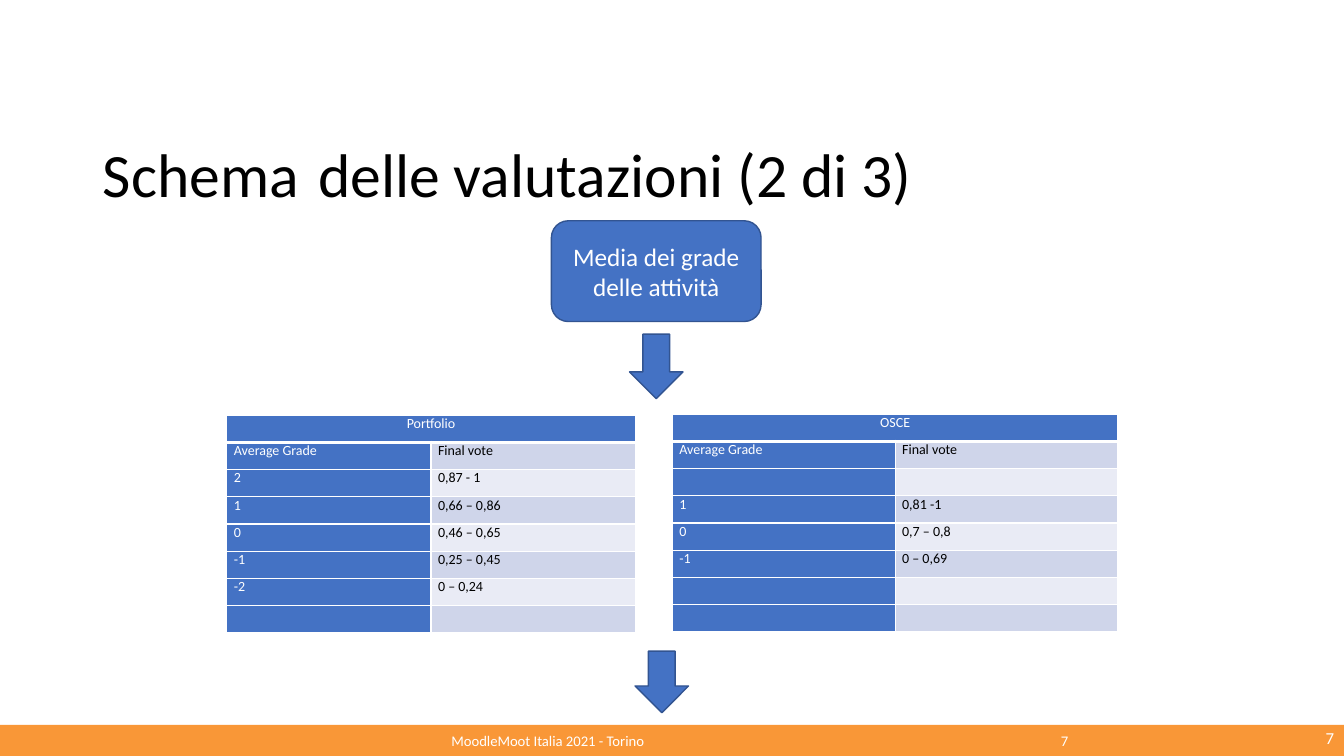
from dataclasses import dataclass
from typing import Optional

from lxml.etree import SubElement
from pptx import Presentation
from pptx.dml.color import RGBColor
from pptx.enum.shapes import MSO_SHAPE as Preset
from pptx.enum.text import MSO_ANCHOR as Anchor, MSO_AUTO_SIZE as AutoSize, PP_ALIGN as Align
from pptx.oxml.ns import qn
from pptx.util import Inches, Pt


@dataclass(frozen=True)
class Theme:
    font: str = "Calibri"
    white: str = "FFFFFF"
    black: str = "000000"
    blue: str = "4472C4"
    outline: str = "325491"
    orange: str = "F99737"
    bands: tuple[str, str] = ("CFD5EA", "E9EBF5")
    title_size: float = 44
    title_gap_size: float = 60
    box_size: float = 18
    page_size: float = 12
    footer_size: float = 10.5
    table_size: float = 10


@dataclass(frozen=True)
class Area:
    """Left, top, width and height as percentages of the slide."""
    left: float
    top: float
    width: float
    height: float

    def emu(self) -> tuple[int, int, int, int]:
        return (round(WIDTH * self.left / 100), round(HEIGHT * self.top / 100),
                round(WIDTH * self.width / 100), round(HEIGHT * self.height / 100))


@dataclass(frozen=True)
class Block:
    """A filled preset shape."""
    preset: Preset
    area: Area
    fill: str
    line: Optional[str] = None
    rotation: float = 0


@dataclass(frozen=True)
class GradeTable:
    name: str
    area: Area
    grades: tuple[tuple[str, str], ...]


THEME = Theme()
WIDTH, HEIGHT = Inches(13.33), Inches(7.5)
EMPTY = ("", "")

TITLE_AREA = Area(6.9, 9.87, 86.25, 19.33)
PAGE_AREA = Area(83.12, 94.93, 16.88, 5.33)
FOOTER = Block(Preset.RECTANGLE, Area(0, 95.87, 100, 4.13), THEME.orange)
FOOTER_TABS = (32.85, 78.2)  # percentages of the slide width
AVERAGE = Block(Preset.ROUNDED_RECTANGLE, Area(41.03, 29.2, 15.6, 13.33),
                THEME.blue, THEME.outline)
ARROWS = [
    Block(Preset.RIGHT_ARROW, area, THEME.blue, THEME.outline, 90)
    for area in (Area(46.43, 44.93, 4.8, 7.07), Area(46.95, 86.67, 4.58, 7.07))
]
TABLES = [
    GradeTable("Portfolio", Area(16.88, 54.93, 30.38, 28.8), (
        ("2", "0,87 - 1"), ("1", "0,66 – 0,86"), ("0", "0,46 – 0,65"),
        ("-1", "0,25 – 0,45"), ("-2", "0 – 0,24"), EMPTY)),
    GradeTable("OSCE", Area(50.03, 54.8, 33.15, 28.8), (
        EMPTY, ("1", "0,81 -1"), ("0", "0,7 – 0,8"),
        ("-1", "0 – 0,69"), EMPTY, EMPTY)),
]


def rgb(value: str) -> RGBColor:
    return RGBColor.from_string(value)


def add_span(para, text: str, size: float, color: str) -> None:
    span = para.add_run()
    span.text = text
    span.font.name = THEME.font
    span.font.size = Pt(size)
    span.font.color.rgb = rgb(color)


def add_block(page, block: Block):
    shape = page.shapes.add_shape(block.preset, *block.area.emu())
    shape.shadow.inherit = False
    shape.rotation = block.rotation
    shape.fill.solid()
    shape.fill.fore_color.rgb = rgb(block.fill)
    if block.line:
        shape.line.color.rgb = rgb(block.line)
        shape.line.width = Pt(1)
    else:
        shape.line.fill.background()
    return shape


def write(shape, text: str, size: float, align: Align):
    frame = shape.text_frame
    frame.word_wrap = True
    frame.vertical_anchor = Anchor.MIDDLE
    para = frame.paragraphs[0]
    para.alignment = align
    add_span(para, text, size, THEME.white)
    return para


def add_title(page) -> None:
    title = page.shapes.title
    title.left, title.top, title.width, title.height = TITLE_AREA.emu()
    frame = title.text_frame
    frame.word_wrap = True
    frame.auto_size = AutoSize.NONE
    frame.vertical_anchor = Anchor.BOTTOM
    para = frame.paragraphs[0]
    para.alignment = Align.LEFT
    para.line_spacing = 0.9
    for text, size in (("Schema", THEME.title_size), (" ", THEME.title_gap_size),
                       ("delle valutazioni (2 di 3)", THEME.title_size)):
        add_span(para, text, size, THEME.black)


def add_footer(page) -> None:
    bar = add_block(page, FOOTER)
    para = write(bar, "\tMoodleMoot Italia 2021 - Torino\t7", THEME.footer_size, Align.LEFT)
    tabs = SubElement(para._p.get_or_add_pPr(), qn("a:tabLst"))
    for share in FOOTER_TABS:
        SubElement(tabs, qn("a:tab"), pos=str(round(WIDTH * share / 100)), algn="l")
    number = page.shapes.add_textbox(*PAGE_AREA.emu())
    write(number, "7", THEME.page_size, Align.RIGHT)


def set_borders(cell, bottom: float) -> None:
    properties = cell._tc.get_or_add_tcPr()
    for side, width in (("L", 1), ("R", 1), ("T", 1), ("B", bottom)):
        line = SubElement(properties, qn(f"a:ln{side}"), w=str(Pt(width)))
        fill = SubElement(line, qn("a:solidFill"))
        SubElement(fill, qn("a:srgbClr"), val=THEME.white)


def fill_cell(cell, text: str, fill: str, color: str, heading: bool) -> None:
    set_borders(cell, 3 if heading else 1)
    cell.fill.solid()
    cell.fill.fore_color.rgb = rgb(fill)
    cell.margin_left = cell.margin_right = Inches(0.07)
    cell.margin_top = cell.margin_bottom = 0
    para = cell.text_frame.paragraphs[0]
    para.alignment = Align.CENTER if heading else Align.JUSTIFY
    para.space_after = Pt(6)
    if text:
        add_span(para, text, THEME.table_size, color)
    else:  # keeps an empty row as low as the others
        SubElement(para._p, qn("a:endParaRPr"), sz=str(THEME.table_size * 100))


def add_grade_table(page, spec: GradeTable) -> None:
    rows = ((spec.name, ""), ("Average Grade", "Final vote"), *spec.grades)
    table = page.shapes.add_table(len(rows), 2, *spec.area.emu()).table
    table.first_row = table.horz_banding = False
    table.cell(0, 0).merge(table.cell(0, 1))
    for index, (grade, vote) in enumerate(rows):
        heading = index == 0
        band = THEME.blue if heading else THEME.bands[(index - 1) % 2]
        fill_cell(table.cell(index, 0), grade, THEME.blue, THEME.white, heading)
        fill_cell(table.cell(index, 1), vote, band, THEME.black, heading)


def main() -> None:
    deck = Presentation()
    deck.slide_width, deck.slide_height = WIDTH, HEIGHT
    page = deck.slides.add_slide(deck.slide_layouts[5])

    # Title and footer
    add_title(page)
    add_footer(page)

    # Flow from the average to the two grade tables
    box = add_block(page, AVERAGE)
    write(box, "Media dei grade delle attività", THEME.box_size, Align.CENTER)
    for arrow in ARROWS:
        add_block(page, arrow)
    for spec in TABLES:
        add_grade_table(page, spec)

    deck.save("out.pptx")


if __name__ == "__main__":
    main()
